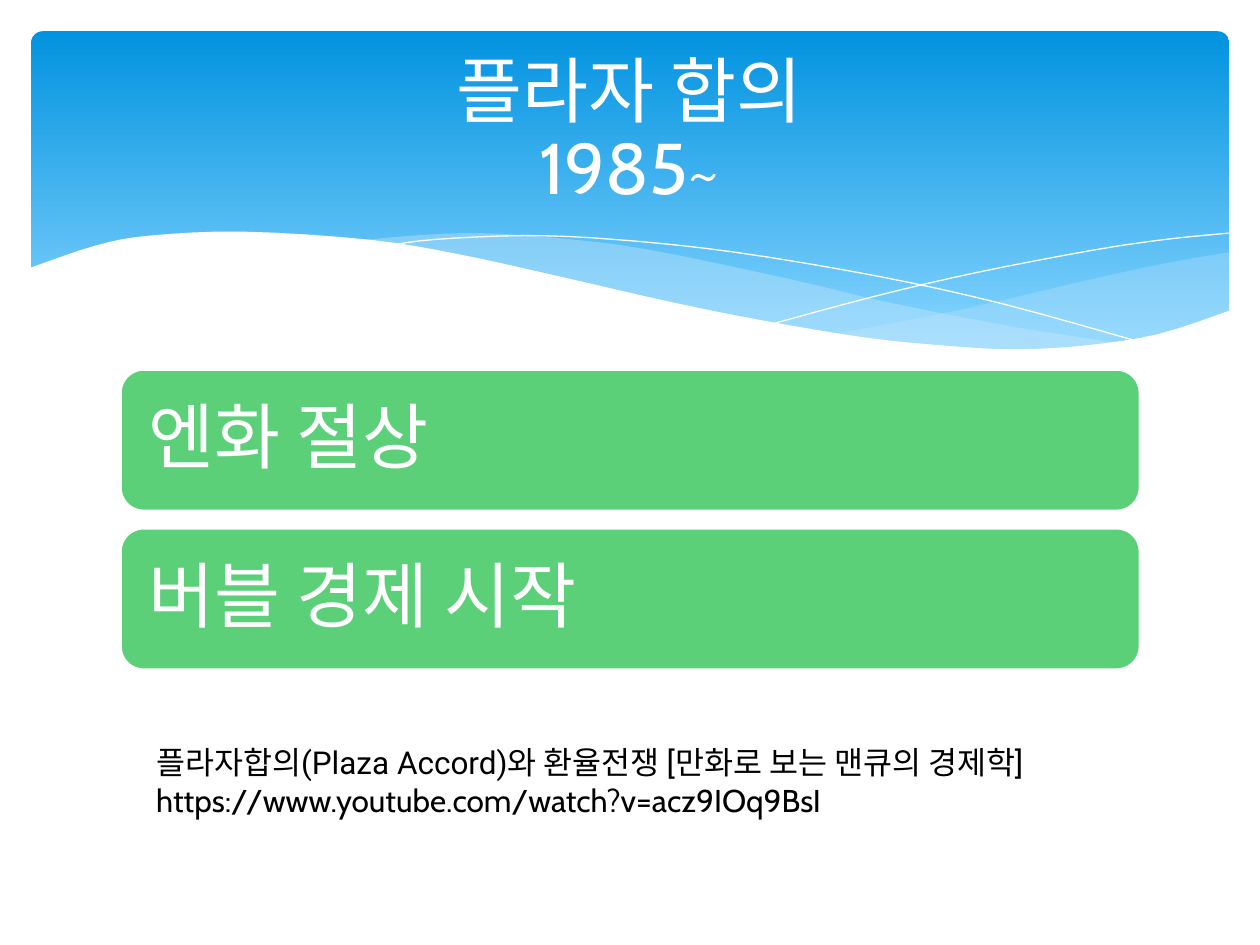
from dataclasses import dataclass

from lxml.etree import SubElement
from pptx import Presentation
from pptx.dml.color import RGBColor
from pptx.enum.shapes import MSO_SHAPE as Preset
from pptx.enum.text import MSO_ANCHOR as Anchor, MSO_AUTO_SIZE as AutoSize, PP_ALIGN as Align
from pptx.oxml.ns import qn
from pptx.util import Cm, Pt

WHITE = RGBColor(0xFF, 0xFF, 0xFF)
BLACK = RGBColor(0x00, 0x00, 0x00)
SKY_TOP = RGBColor(0x02, 0x93, 0xE0)
SKY_BOTTOM = RGBColor(0x83, 0xD3, 0xFE)
MIST = RGBColor(0xC6, 0xE7, 0xFC)
GREEN = RGBColor(0x5B, 0xD0, 0x78)
HEADING_FONT = "Cabin"
NOTE_FONT = "Roboto"
UNITS_PER_CM = 1000  # freeform points are rounded to whole units

Point = tuple[float, float]
Curve = list[Point]


@dataclass
class Band:
    """A filled area bounded by smooth edges, joined in order."""
    edges: list[Curve]
    color: RGBColor
    opacity: int = 100


RIGHT_BAND = Band([
    [(24.79, 5.08), (23.39, 5.33), (21.87, 5.66), (19.79, 6.15), (17.93, 6.53), (16.79, 6.73)],
    [(16.79, 6.73), (18.26, 6.91), (19.84, 7.04), (21.21, 7.04), (22.58, 6.91), (23.75, 6.65),
     (24.79, 6.27)],
], MIST, 29)
LEFT_BAND = Band([
    [(7.26, 4.85), (8.33, 4.75), (9.65, 4.7), (11.23, 4.8), (13.06, 5.03), (15.98, 5.64),
     (17.93, 6.1), (20.5, 6.6), (22.68, 6.93)],
    [(22.68, 6.93), (21.77, 7.04), (20.5, 7.06), (19, 7.01), (16.89, 6.76), (14.38, 6.3),
     (11.4, 5.64), (9.19, 5.16), (7.26, 4.85)],
], MIST, 40)
WHITE_WAVE = Band([
    [(0.58, 5.41), (1.93, 4.95), (3.02, 4.75), (4.9, 4.67), (7.42, 4.83), (9.27, 5.13),
     (11.35, 5.59), (13.44, 6.07), (15.32, 6.45), (17.48, 6.81), (19.33, 6.99), (20.55, 7.04),
     (21.92, 6.96), (23.37, 6.73), (24.82, 6.25)],
    [(24.82, 8.36), (0.58, 8.36)],
], WHITE)
HAIRLINES: list[Curve] = [
    [(7.85, 4.95), (8.74, 4.83), (10.57, 4.75), (12.42, 4.83), (14.78, 5.08), (17.65, 5.56),
     (20.19, 6.12), (23.04, 6.91)],
    [(15.57, 6.53), (17.65, 5.97), (19.71, 5.49), (22, 5.05), (23.47, 4.83), (24.77, 4.7)],
]

CARDS = ["엔화 절상", "버블 경제 시작"]
CARD_TOP, CARD_HEIGHT, CARD_PITCH = 7.44, 2.87, 3.2
NOTES = [
    ("플라자합의(Plaza Accord)와 환율전쟁 [만화로 보는 맨큐의 경제학]", NOTE_FONT),
    ("https://www.youtube.com/watch?v=acz9IOq9BsI", HEADING_FONT),
]


def smooth(curve: Curve, steps: int = 4) -> Curve:
    """Sample a Catmull-Rom spline through the points of the curve."""
    if len(curve) < 3:
        return curve
    padded = [curve[0], *curve, curve[-1]]
    samples = [curve[0]]
    for a, b, c, d in zip(padded, padded[1:], padded[2:], padded[3:]):
        for step in range(1, steps + 1):
            t = step / steps
            x, y = (
                (2 * p + (r - o) * t + (2 * o - 5 * p + 4 * r - s) * t**2
                 + (3 * p - o - 3 * r + s) * t**3) / 2
                for o, p, r, s in zip(a, b, c, d)
            )
            samples.append((x, y))
    return samples


def draw_outline(page, points: Curve, closed: bool):
    start, *rest = [(x * UNITS_PER_CM, y * UNITS_PER_CM) for x, y in points]
    builder = page.shapes.build_freeform(*start, scale=Cm(1) / UNITS_PER_CM)
    builder.add_line_segments(rest, close=closed)
    shape = builder.convert_to_shape()
    shape.shadow.inherit = False
    return shape


def draw_band(page, band: Band) -> None:
    points = [point for edge in band.edges for point in smooth(edge)]
    shape = draw_outline(page, points, closed=True)
    shape.fill.solid()
    shape.fill.fore_color.rgb = band.color
    shape.line.fill.background()
    if band.opacity < 100:
        color = shape.fill._xPr.find(qn("a:solidFill"))[0]
        SubElement(color, qn("a:alpha")).set("val", str(band.opacity * 1000))


def draw_hairline(page, curve: Curve) -> None:
    shape = draw_outline(page, smooth(curve), closed=False)
    shape.fill.background()
    shape.line.color.rgb = WHITE
    shape.line.width = Pt(0)


def draw_header(page) -> None:
    panel = page.shapes.add_shape(
        Preset.ROUNDED_RECTANGLE, Cm(0.63), Cm(0.63), Cm(24.15), Cm(6.86))
    panel.adjustments[0] = 0.034
    panel.shadow.inherit = False
    panel.line.fill.background()
    panel.fill.gradient()
    panel.fill.gradient_angle = 270
    first, last = panel.fill.gradient_stops
    first.color.rgb, first.position = SKY_TOP, 0
    last.color.rgb, last.position = SKY_BOTTOM, 0.9
    draw_band(page, RIGHT_BAND)
    draw_band(page, LEFT_BAND)
    for curve in HAIRLINES:
        draw_hairline(page, curve)
    draw_band(page, WHITE_WAVE)


def format_text(para, font: str, size: int, color: RGBColor) -> None:
    for span in para.runs:
        span.font.name = font
        span.font.size = Pt(size)
        span.font.color.rgb = color


def draw_title(page) -> None:
    title = page.shapes.title
    title.left, title.top, title.width, title.height = Cm(1.27), Cm(0.94), Cm(22.86), Cm(3.48)
    page.shapes._spTree.append(title._element)  # in front of the header
    frame = title.text_frame
    frame.text = "플라자 합의\v1985~"
    frame.vertical_anchor = Anchor.MIDDLE
    frame.auto_size = AutoSize.NONE
    para = frame.paragraphs[0]
    para.alignment = Align.CENTER
    para.line_spacing = 0.9
    format_text(para, HEADING_FONT, 41, WHITE)


def draw_card(page, text: str, top: float) -> None:
    card = page.shapes.add_shape(
        Preset.ROUNDED_RECTANGLE, Cm(2.42), Cm(top), Cm(20.57), Cm(CARD_HEIGHT))
    card.shadow.inherit = False
    card.fill.solid()
    card.fill.fore_color.rgb = GREEN
    card.line.color.rgb = WHITE
    card.line.width = Pt(2)
    frame = card.text_frame
    frame.margin_left = frame.margin_right = frame.margin_top = frame.margin_bottom = Cm(0.43)
    frame.vertical_anchor = Anchor.MIDDLE
    frame.text = text
    para = frame.paragraphs[0]
    para.alignment = Align.LEFT
    para.line_spacing = 0.9
    format_text(para, HEADING_FONT, 41, WHITE)


def draw_notes(page) -> None:
    box = page.shapes.add_textbox(Cm(2.9), Cm(14.86), Cm(20.09), Cm(1.8))
    frame = box.text_frame
    frame.word_wrap = True
    frame.auto_size = AutoSize.SHAPE_TO_FIT_TEXT
    frame.text = "\n".join(text for text, _ in NOTES)
    for para, (_, font) in zip(frame.paragraphs, NOTES):
        format_text(para, font, 18, BLACK)


def main() -> None:
    deck = Presentation()
    deck.slide_width, deck.slide_height = Cm(25.4), Cm(19.05)
    page = deck.slides.add_slide(deck.slide_layouts[5])
    draw_header(page)
    draw_title(page)
    for index, text in enumerate(CARDS):
        draw_card(page, text, CARD_TOP + index * CARD_PITCH)
    draw_notes(page)
    deck.save("out.pptx")


if __name__ == "__main__":
    main()
